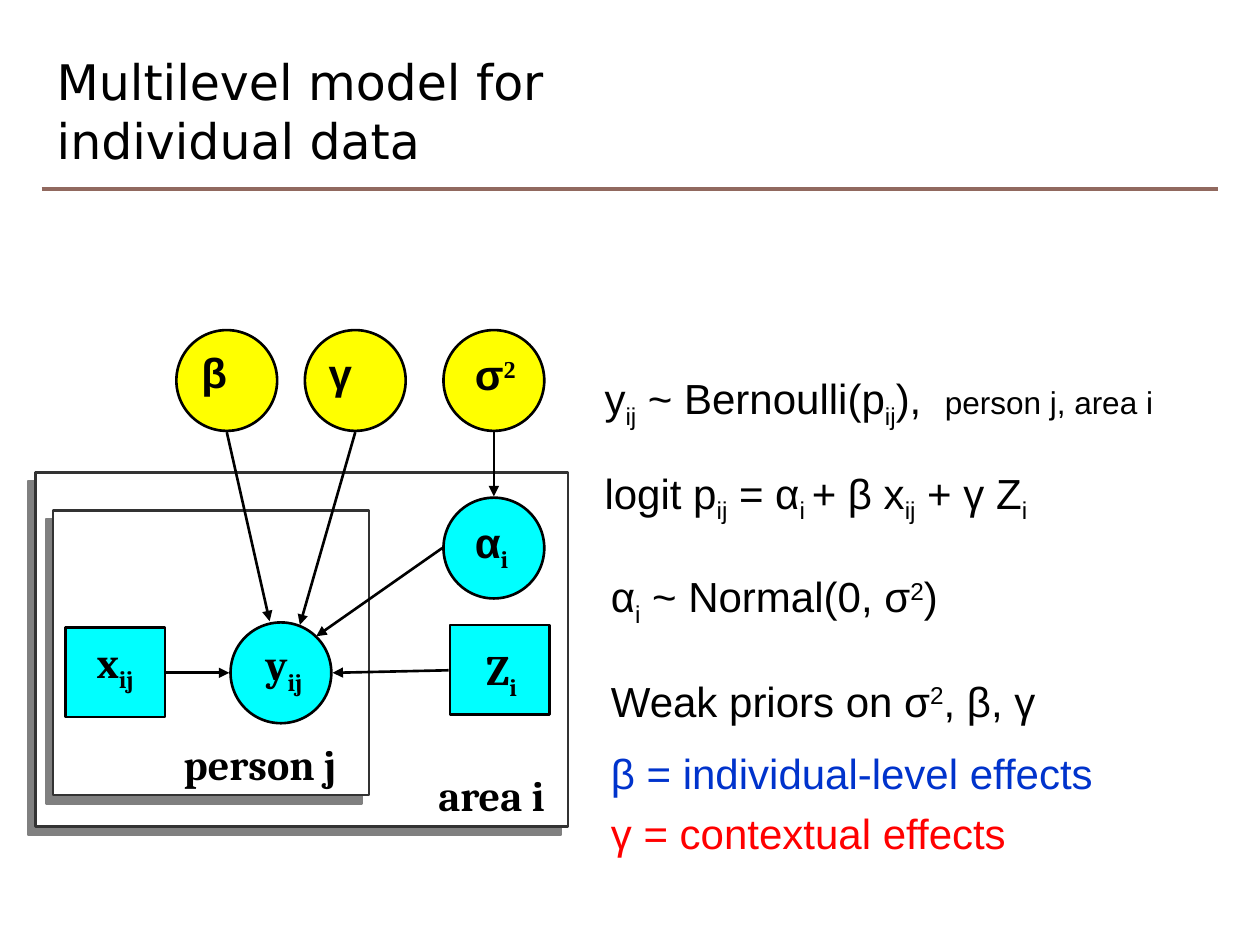
from dataclasses import dataclass
from typing import NamedTuple

from lxml import etree
from pptx import Presentation
from pptx.dml.color import RGBColor
from pptx.enum.shapes import MSO_CONNECTOR, MSO_SHAPE
from pptx.enum.text import MSO_ANCHOR, PP_ALIGN
from pptx.oxml.ns import qn
from pptx.util import Inches, Pt

RECT, OVAL = MSO_SHAPE.RECTANGLE, MSO_SHAPE.OVAL
STRAIGHT = MSO_CONNECTOR.STRAIGHT
TOP, LEFT = MSO_ANCHOR.TOP, PP_ALIGN.LEFT
SUB, SUPER = -25, 30


@dataclass(frozen=True)
class Theme:
    ink: str = "000000"
    plate_fill: str = "FFFFFF"
    plate_line: str = "333333"
    plate_shadow: str = "808080"
    parameter: str = "FFFF00"
    variable: str = "00FFFF"
    rule: str = "91695F"
    individual: str = "0033CC"
    contextual: str = "FF0000"
    title_font: str = "DejaVu Sans"
    sans: str = "Arial"
    serif: str = "Cambria"
    exponent: str = "Times New Roman"
    title_size: int = 28
    text_size: int = 24
    note_size: int = 18
    outline: float = 1.5
    rule_width: float = 1.75


THEME = Theme()


class Term(NamedTuple):
    text: str
    shift: int = 0
    font: str = THEME.sans
    size: int = THEME.text_size


class Line(NamedTuple):
    terms: list[Term]
    color: str = THEME.ink
    space_before: float = 0


class Node(NamedTuple):
    kind: int
    left: float
    top: float
    width: float
    height: float
    fill: str


class Block(NamedTuple):
    left: float
    top: float
    width: float
    height: float
    lines: list[Line]
    bold: bool = False


class Arrow(NamedTuple):
    x1: float
    y1: float
    x2: float
    y2: float


def circle(left: float, top: float, fill: str) -> Node:
    return Node(OVAL, left, top, 0.8, 0.8, fill)


def box(left: float, top: float) -> Node:
    return Node(RECT, left, top, 0.79, 0.71, THEME.variable)


def label(left: float, top: float, width: float, *terms: Term) -> Block:
    return Block(left, top, width, 0.5, [Line(list(terms))], True)


def serif(text: str, shift: int = 0) -> Term:
    return Term(text, shift, THEME.serif)


def format_font(font, color: str, **values) -> None:
    for name, value in values.items():
        setattr(font, name, value)
    font.color.rgb = RGBColor.from_string(color)


def draw_node(slide, node: Node, line: str = THEME.ink):
    shape = slide.shapes.add_shape(node.kind, *map(Inches, node[1:5]))
    shape.shadow.inherit = False
    shape.fill.solid()
    shape.fill.fore_color.rgb = RGBColor.from_string(node.fill)
    shape.line.color.rgb = RGBColor.from_string(line)
    shape.line.width = Pt(THEME.outline)
    return shape


def draw_plate(slide, plate: Node) -> None:
    shape = draw_node(slide, plate, THEME.plate_line)
    effects = shape._element.spPr.find(qn("a:effectLst"))
    shadow = etree.SubElement(effects, qn("a:outerShdw"), blurRad="0",
                              dist=str(Pt(6.4)), dir=str(129 * 60000),
                              algn="ctr", rotWithShape="0")
    etree.SubElement(shadow, qn("a:srgbClr"), val=THEME.plate_shadow)


def draw_line(slide, ends: Arrow, color: str, width: float, head: bool = True) -> None:
    connector = slide.shapes.add_connector(STRAIGHT, *map(Inches, ends))
    connector.line.color.rgb = RGBColor.from_string(color)
    connector.line.width = Pt(width)
    properties = connector._element.spPr
    if head:
        etree.SubElement(properties.find(qn("a:ln")), qn("a:tailEnd"), type="triangle")
    etree.SubElement(properties, qn("a:effectLst"))


def draw_block(slide, block: Block) -> None:
    frame = slide.shapes.add_textbox(*map(Inches, block[:4])).text_frame
    frame.word_wrap = True
    for index, line in enumerate(block.lines):
        paragraph = frame.add_paragraph() if index else frame.paragraphs[0]
        if index:
            paragraph.space_before = Pt(line.space_before)
        for term in line.terms:
            run = paragraph.add_run()
            run.text = term.text
            format_font(run.font, line.color, name=term.font,
                        size=Pt(term.size), bold=block.bold)
            if term.shift:
                run._r.get_or_add_rPr().set("baseline", str(term.shift * 1000))


def draw_title(slide, text: str) -> None:
    title = slide.shapes.title
    place = {"left": 0.35, "top": 0.36, "width": 9.37, "height": 0.79}
    for name, value in place.items():
        setattr(title, name, Inches(value))
    frame = title.text_frame
    frame.text = text
    frame.vertical_anchor = TOP
    frame.paragraphs[0].alignment = LEFT
    for run in frame.paragraphs[0].runs:
        format_font(run.font, THEME.ink, name=THEME.title_font, size=Pt(THEME.title_size))


PLATES = [
    Node(RECT, 0.28, 3.75, 4.23, 2.81, THEME.plate_fill),  # area i
    Node(RECT, 0.42, 4.05, 2.51, 2.26, THEME.plate_fill),  # person j
]
NODES = [circle(left, 2.62, THEME.parameter) for left in (1.4, 2.42, 3.52)] + [
    circle(3.52, 3.95, THEME.variable),  # alpha
    circle(1.83, 4.94, THEME.variable),  # y
    box(0.52, 4.98),  # x
    box(3.57, 4.96),  # Z
]
ARROWS = [
    Arrow(1.8, 3.43, 2.14, 4.93),  # beta to y
    Arrow(2.82, 3.43, 2.38, 4.96),  # gamma to y
    Arrow(3.92, 3.43, 3.92, 3.94),  # sigma to alpha
    Arrow(3.51, 4.35, 2.51, 5.05),  # alpha to y
    Arrow(1.32, 5.34, 1.82, 5.34),  # x to y
    Arrow(3.56, 5.32, 2.64, 5.34),  # Z to y
]
LABELS = [
    label(1.5, 2.7, 0.71, Term("β")),
    label(2.51, 2.71, 0.79, Term("γ")),
    label(3.67, 2.72, 0.54, Term("σ"), Term("2", SUPER, THEME.exponent)),
    label(3.67, 4.05, 0.54, Term("α"), serif("i", SUB)),
    label(2.01, 5.02, 0.58, serif("y"), serif("ij", SUB)),
    label(0.67, 5.0, 0.64, serif("x"), serif("ij", SUB)),
    label(3.76, 5.06, 0.55, serif("Z"), serif("i", SUB)),
    label(1.36, 5.81, 1.62, serif("person j")),
    label(3.38, 6.06, 1.08, serif("area i")),
]
EQUATIONS = [
    Block(4.7, 2.91, 5.3, 0.6, [Line([
        Term("y"), Term("ij", SUB), Term(" ~ Bernoulli(p"), Term("ij", SUB),
        Term("),  "), Term("person j, area i", size=THEME.note_size)])]),
    Block(4.7, 3.66, 5.3, 0.6, [Line([
        Term("logit p"), Term("ij", SUB), Term(" = α"), Term("i ", SUB),
        Term("+ β x"), Term("ij", SUB), Term(" + γ Z"), Term("i", SUB)])]),
    Block(4.75, 4.48, 4.87, 0.6, [Line([
        Term("α"), Term("i", SUB), Term(" ~ Normal(0, σ"), Term("2", SUPER), Term(")")])]),
    Block(4.75, 5.31, 5.02, 1.44, [
        Line([Term("Weak priors on σ"), Term("2", SUPER), Term(", β, γ")]),
        Line([Term("β = individual-level effects")], THEME.individual, 12.4),
        Line([Term("γ = contextual effects")], THEME.contextual, 5.5)]),
]


def main() -> None:
    deck = Presentation()
    deck.slide_width, deck.slide_height = Inches(10), Inches(7.5)
    slide = deck.slides.add_slide(deck.slide_layouts[5])
    # Heading
    draw_title(slide, "Multilevel model for \vindividual data")
    draw_line(slide, Arrow(0.33, 1.5, 9.67, 1.5), THEME.rule, THEME.rule_width, head=False)
    # Graphical model
    for plate in PLATES:
        draw_plate(slide, plate)
    for node in NODES:
        draw_node(slide, node)
    for arrow in ARROWS:
        draw_line(slide, arrow, THEME.ink, THEME.outline)
    # Node labels and equations
    for block in LABELS + EQUATIONS:
        draw_block(slide, block)
    deck.save("out.pptx")


if __name__ == "__main__":
    main()
